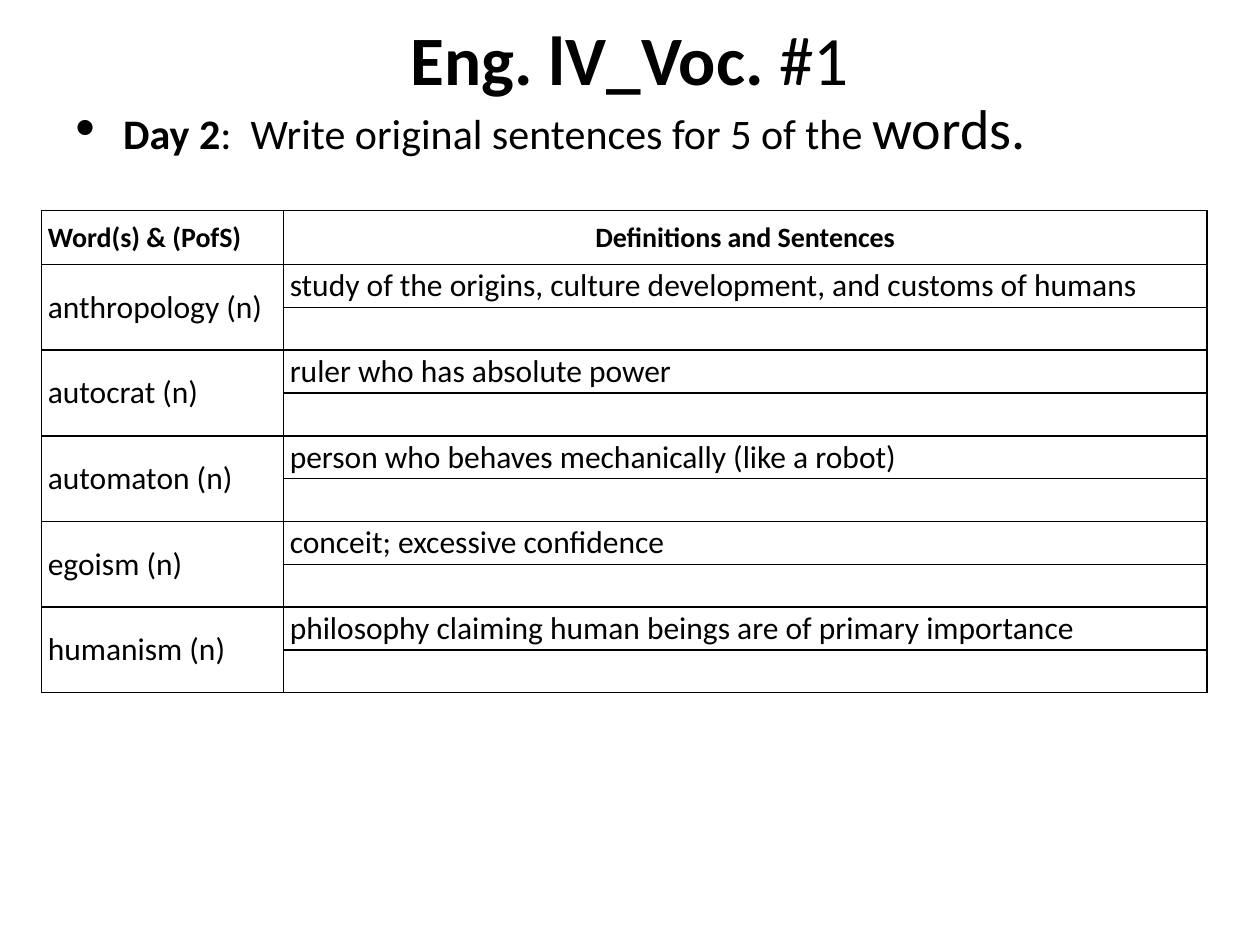
from lxml import etree
from pptx import Presentation
from pptx import util as u
from pptx.dml.color import RGBColor
from pptx.enum import text
from pptx.oxml.ns import qn

INK = {"text": "000000", "rule": "000000"}
FONT = "Calibri"
WORDS = [
    ("anthropology (n)", "study of the origins, culture development, and customs of humans"),
    ("autocrat (n)", "ruler who has absolute power"),
    ("automaton (n)", "person who behaves mechanically (like a robot)"),
    ("egoism (n)", "conceit; excessive confidence"),
    ("humanism (n)", "philosophy claiming human beings are of primary importance"),
]


def style(font, size, bold=False):
    font.name, font.size, font.bold = FONT, u.Pt(size), bold
    font.color.rgb = RGBColor.from_string(INK["text"])


def rule(cell):
    """Draw a 1 pt line on all four sides of a cell."""
    props = cell._tc.get_or_add_tcPr()
    for side in ("lnL", "lnR", "lnT", "lnB"):
        line = etree.SubElement(props, qn("a:" + side), w=str(u.Pt(1)))
        fill = etree.SubElement(line, qn("a:solidFill"))
        etree.SubElement(fill, qn("a:srgbClr"), val=INK["rule"])


deck = Presentation()
deck.slide_width, deck.slide_height = u.Inches(10), u.Inches(7.5)
slide = deck.slides.add_slide(deck.slide_layouts[6])
left, wide = u.Inches(0.5), u.Inches(9)

# Title and task: top, height, top inset, anchor, runs of (words, size, bold)
heads = [
    (0, 0.87, 0.1, text.MSO_ANCHOR.MIDDLE,
     [("Eng. lV_Voc. ", 39.6, True), ("#1", 39.6, False)]),
    (0.67, 0.67, 0.07, text.MSO_ANCHOR.TOP,
     [("Day 2", 24, True),
      (":  Write original sentences for 5 of the ", 24, False),
      ("words.", 32, False)]),
]
lines = []
for top, high, inset, anchor, runs in heads:
    frame = slide.shapes.add_textbox(left, u.Inches(top), wide, u.Inches(high)).text_frame
    frame.word_wrap = True
    frame.margin_top = u.Inches(inset)
    frame.vertical_anchor = anchor
    line = frame.paragraphs[0]
    for words, size, bold in runs:
        run = line.add_run()
        run.text = words
        style(run.font, size, bold)
    lines.append(line)

title, task = lines
title.alignment = text.PP_ALIGN.CENTER
props = task._p.get_or_add_pPr()
props.set("marL", str(u.Inches(0.38)))
props.set("indent", str(-u.Inches(0.38)))
etree.SubElement(props, qn("a:buSzPct"), val="133000")
etree.SubElement(props, qn("a:buFont"), typeface="Arial")
etree.SubElement(props, qn("a:buChar"), char="•")

# Each word spans two rows: its definition, then a blank row for a sentence
head, step = u.Inches(0.43), u.Inches(0.34)
count = 1 + 2 * len(WORDS)
table = slide.shapes.add_table(count, 2, u.Inches(0.33), u.Inches(1.67),
                               u.Inches(9.25), head + step * (count - 1)).table
table.first_row = table.horz_banding = False
table.columns[0].width, table.columns[1].width = u.Inches(1.92), u.Inches(7.33)
for i, row in enumerate(table.rows):
    row.height = step if i else head

table.cell(0, 0).text = "Word(s) & (PofS)"
table.cell(0, 1).text = "Definitions and Sentences"
for i, (word, sense) in enumerate(WORDS):
    top = 1 + 2 * i
    table.cell(top, 0).merge(table.cell(top + 1, 0))
    table.cell(top, 0).text = word
    table.cell(top, 1).text = sense

for i, row in enumerate(table.rows):
    for cell in row.cells:
        rule(cell)
        cell.fill.background()
        cell.margin_left = cell.margin_right = u.Inches(0.05)
        cell.margin_top = cell.margin_bottom = 0
        cell.vertical_anchor = text.MSO_ANCHOR.MIDDLE
        style(cell.text_frame.paragraphs[0].font, 18 if i else 16, not i)
table.cell(0, 1).text_frame.paragraphs[0].alignment = text.PP_ALIGN.CENTER

deck.save("out.pptx")
